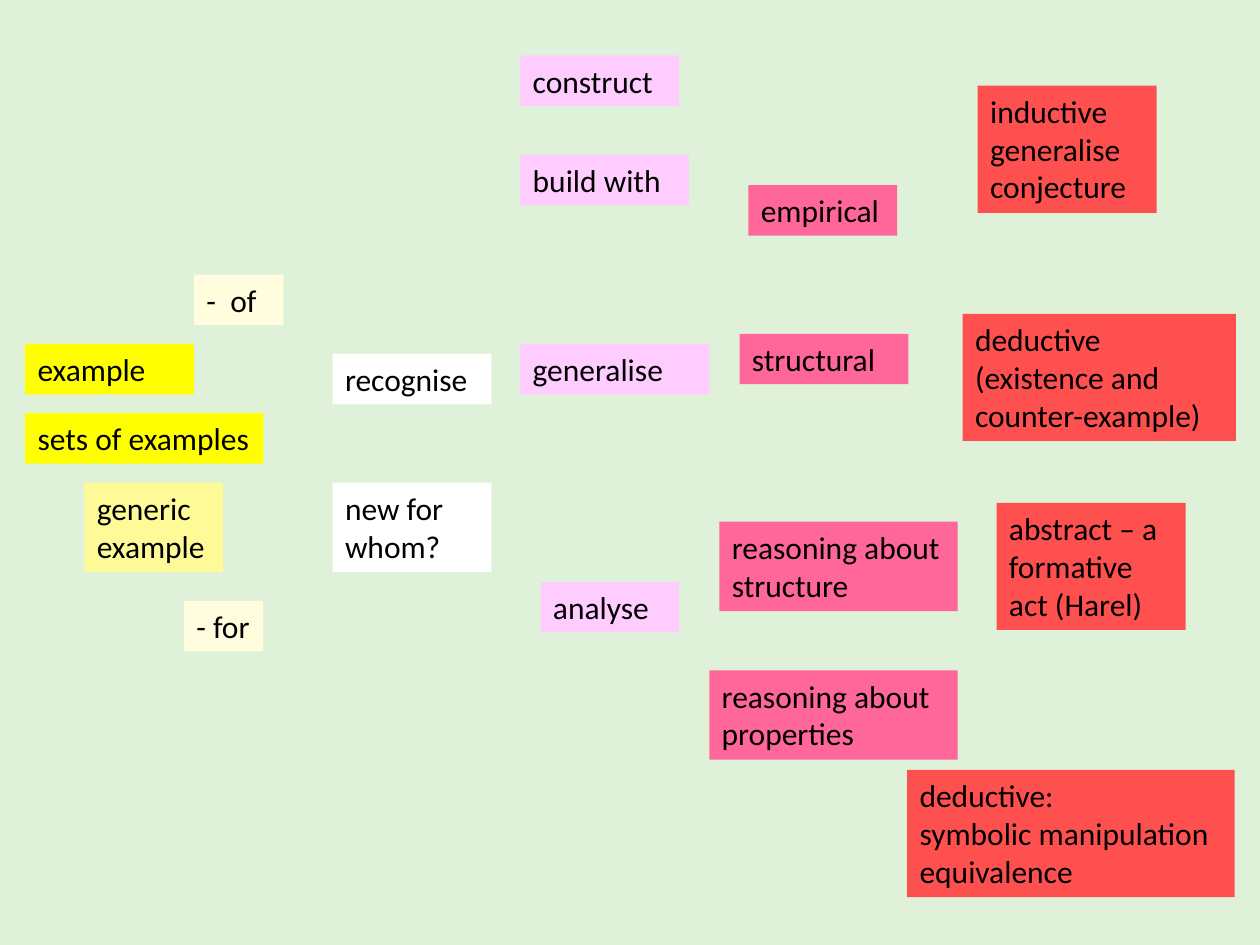
"""Build a concept map of examples, actions, reasoning and kinds of proof."""

from dataclasses import dataclass

from pptx import Presentation
from pptx.dml.color import RGBColor
from pptx.enum.text import MSO_AUTO_SIZE as AutoSize, PP_ALIGN as Align
from pptx.slide import Slide
from pptx.util import Inches, Pt


@dataclass(frozen=True)
class Theme:
    background: str = "DFF2D9"
    text: str = "000000"
    example: str = "FFFF00"
    generic: str = "FFFA98"
    relation: str = "FFFDDD"
    recognition: str = "FFFFFF"
    action: str = "FFCCFF"
    reasoning: str = "FF6699"
    proof: str = "FF5050"
    font: str = "Calibri"
    size: int = 18


@dataclass(frozen=True)
class Concept:
    text: str
    fill: str
    left: float
    top: float
    width: float
    lines: int = 1


THEME = Theme()
HEIGHTS = {1: 0.4, 2: 0.71, 3: 1.01}

CONCEPTS = [
    Concept("-  of", THEME.relation, 1.54, 2.18, 0.71),
    Concept("- for", THEME.relation, 1.46, 4.77, 0.63),
    Concept("inductive generalise\nconjecture", THEME.proof, 7.76, 0.68, 1.42, 3),
    Concept("deductive (existence and counter-example)", THEME.proof, 7.64, 2.49, 2.17, 3),
    Concept("empirical", THEME.reasoning, 5.94, 1.47, 1.18),
    Concept("structural", THEME.reasoning, 5.87, 2.65, 1.34),
    Concept("analyse", THEME.action, 4.29, 4.62, 1.1),
    Concept("generalise", THEME.action, 4.13, 2.73, 1.5),
    Concept("abstract – a formative act (Harel)", THEME.proof, 7.91, 3.99, 1.5, 3),
    Concept("build with", THEME.action, 4.13, 1.23, 1.34),
    Concept("recognise", THEME.recognition, 2.64, 2.81, 1.26),
    Concept("construct", THEME.action, 4.13, 0.44, 1.26),
    Concept("example", THEME.example, 0.2, 2.73, 1.34),
    Concept("new for whom?", THEME.recognition, 2.64, 3.83, 1.26, 2),
    Concept("deductive:\nsymbolic manipulation\nequivalence", THEME.proof, 7.2, 6.11, 2.6, 3),
    Concept("reasoning about\nproperties", THEME.reasoning, 5.63, 5.32, 1.97, 2),
    Concept("generic example", THEME.generic, 0.67, 3.83, 1.1, 2),
    Concept("reasoning about structure", THEME.reasoning, 5.71, 4.14, 1.89, 2),
    Concept("sets of examples", THEME.example, 0.2, 3.28, 1.89),
]


def draw_concept(slide: Slide, concept: Concept) -> None:
    """Draw one filled, left-aligned label."""
    box = slide.shapes.add_textbox(
        Inches(concept.left),
        Inches(concept.top),
        Inches(concept.width),
        Inches(HEIGHTS[concept.lines]),
    )
    box.fill.solid()
    box.fill.fore_color.rgb = RGBColor.from_string(concept.fill)
    frame = box.text_frame
    frame.word_wrap = True
    frame.auto_size = AutoSize.SHAPE_TO_FIT_TEXT
    frame.text = concept.text
    for para in frame.paragraphs:
        para.alignment = Align.LEFT
        para.font.name = THEME.font
        para.font.size = Pt(THEME.size)
        para.font.color.rgb = RGBColor.from_string(THEME.text)


def main() -> None:
    """Build and save the deck."""
    deck = Presentation()
    deck.slide_width, deck.slide_height = Inches(10), Inches(7.5)
    slide = deck.slides.add_slide(deck.slide_layouts[6])
    slide.background.fill.solid()
    slide.background.fill.fore_color.rgb = RGBColor.from_string(THEME.background)
    for concept in CONCEPTS:
        draw_concept(slide, concept)
    deck.save("out.pptx")


if __name__ == "__main__":
    main()
